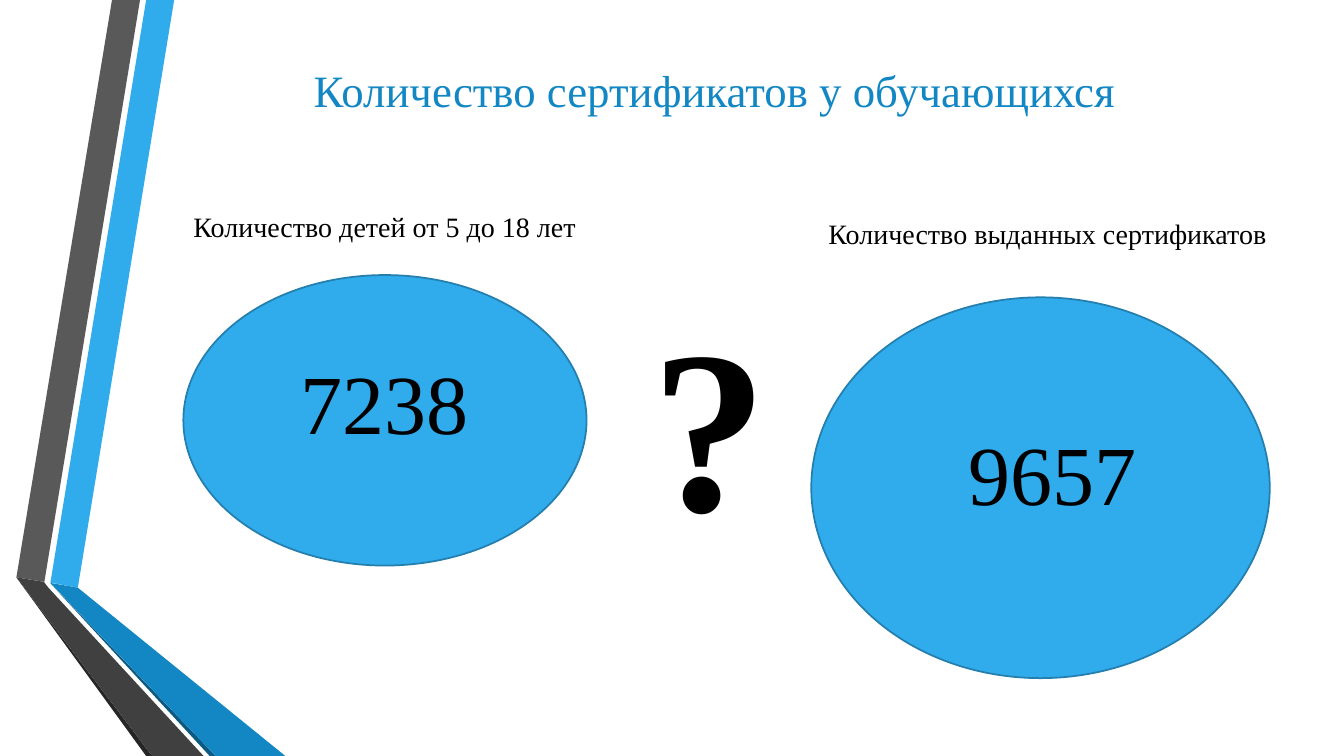
from dataclasses import dataclass

from pptx import Presentation
from pptx.dml.color import RGBColor
from pptx.enum.shapes import MSO_SHAPE
from pptx.enum.text import PP_ALIGN
from pptx.util import Pt


@dataclass(frozen=True)
class Theme:
    """Colours, font and type sizes of the slide."""

    blue: str = "30ACEC"
    blue_dark: str = "1287C3"
    blue_deep: str = "0C5A82"
    outline: str = "247FAF"
    grey: str = "595959"
    grey_dark: str = "404040"
    grey_deep: str = "262626"
    black: str = "000000"
    font: str = "Times New Roman"
    title: int = 32
    label: int = 20
    number: int = 60
    question: int = 166


THEME = Theme()

RIBBONS = [
    (THEME.blue, [(36, 416.2), (55.6, 419.8), (124.4, 0), (104.4, 0)]),
    (THEME.grey, [(100, 0), (80, 0), (11.7, 412.4), (31.7, 415.6)]),
    (THEME.grey_deep, [(11.7, 412.4), (104.4, 540), (108.7, 540)]),
    (THEME.blue_deep, [(36, 416.6), (149.8, 540), (154.1, 540)]),
    (THEME.blue_dark, [(36, 416.4), (154.1, 540), (203.8, 540), (55.6, 419.8)]),
    (THEME.grey_dark, [(11.7, 412.4), (108.7, 540), (145.4, 540), (34.6, 419.8), (31.3, 415.6)]),
]


def paint(shape, color):
    """Give a shape a plain fill without shadow."""
    shape.shadow.inherit = False
    shape.fill.solid()
    shape.fill.fore_color.rgb = RGBColor.from_string(color)


def add_ribbon(slide, color, points):
    """Draw one facet of the folded ribbons."""
    start, *rest = [(Pt(x), Pt(y)) for x, y in points]
    builder = slide.shapes.build_freeform(*start)
    builder.add_line_segments(rest, close=True)
    ribbon = builder.convert_to_shape()
    paint(ribbon, color)
    ribbon.line.fill.background()


def add_ellipse(slide, left, top, width, height):
    """Draw an outlined ellipse behind a number."""
    ellipse = slide.shapes.add_shape(MSO_SHAPE.OVAL, Pt(left), Pt(top), Pt(width), Pt(height))
    paint(ellipse, THEME.blue)
    ellipse.line.color.rgb = RGBColor.from_string(THEME.outline)
    ellipse.line.width = Pt(1.25)


def add_text(slide, text, box, size, color=THEME.black, bold=False, align=PP_ALIGN.LEFT):
    """Place one line of text in a box of left, top, width and height."""
    frame = slide.shapes.add_textbox(*map(Pt, box)).text_frame
    frame.word_wrap = True
    paragraph = frame.paragraphs[0]
    paragraph.text = text
    paragraph.alignment = align
    font = paragraph.font
    font.name = THEME.font
    font.size = Pt(size)
    font.bold = bold
    font.color.rgb = RGBColor.from_string(color)


def main():
    """Build the slide and save it."""
    presentation = Presentation()
    presentation.slide_width = Pt(960)
    presentation.slide_height = Pt(540)
    slide = presentation.slides.add_slide(presentation.slide_layouts[6])

    for color, points in RIBBONS:
        add_ribbon(slide, color, points)

    add_text(slide, "Количество сертификатов у обучающихся", (217, 41, 655, 46),
             THEME.title, THEME.blue_dark)
    add_ellipse(slide, 131, 196.5, 288, 207.5)
    add_ellipse(slide, 579.5, 212.4, 327.5, 272)
    add_text(slide, "?", (458.6, 196, 116, 208), THEME.question, bold=True)
    add_text(slide, "7238", (207.5, 247, 219.5, 152.6), THEME.number)
    add_text(slide, "9657", (615, 297.4, 274, 80), THEME.number, align=PP_ALIGN.CENTER)
    add_text(slide, "Количество детей от 5 до 18 лет", (131, 146.2, 317, 31.5), THEME.label)
    add_text(slide, "Количество выданных сертификатов", (584.6, 151.2, 334, 53), THEME.label)

    presentation.save("out.pptx")


if __name__ == "__main__":
    main()
